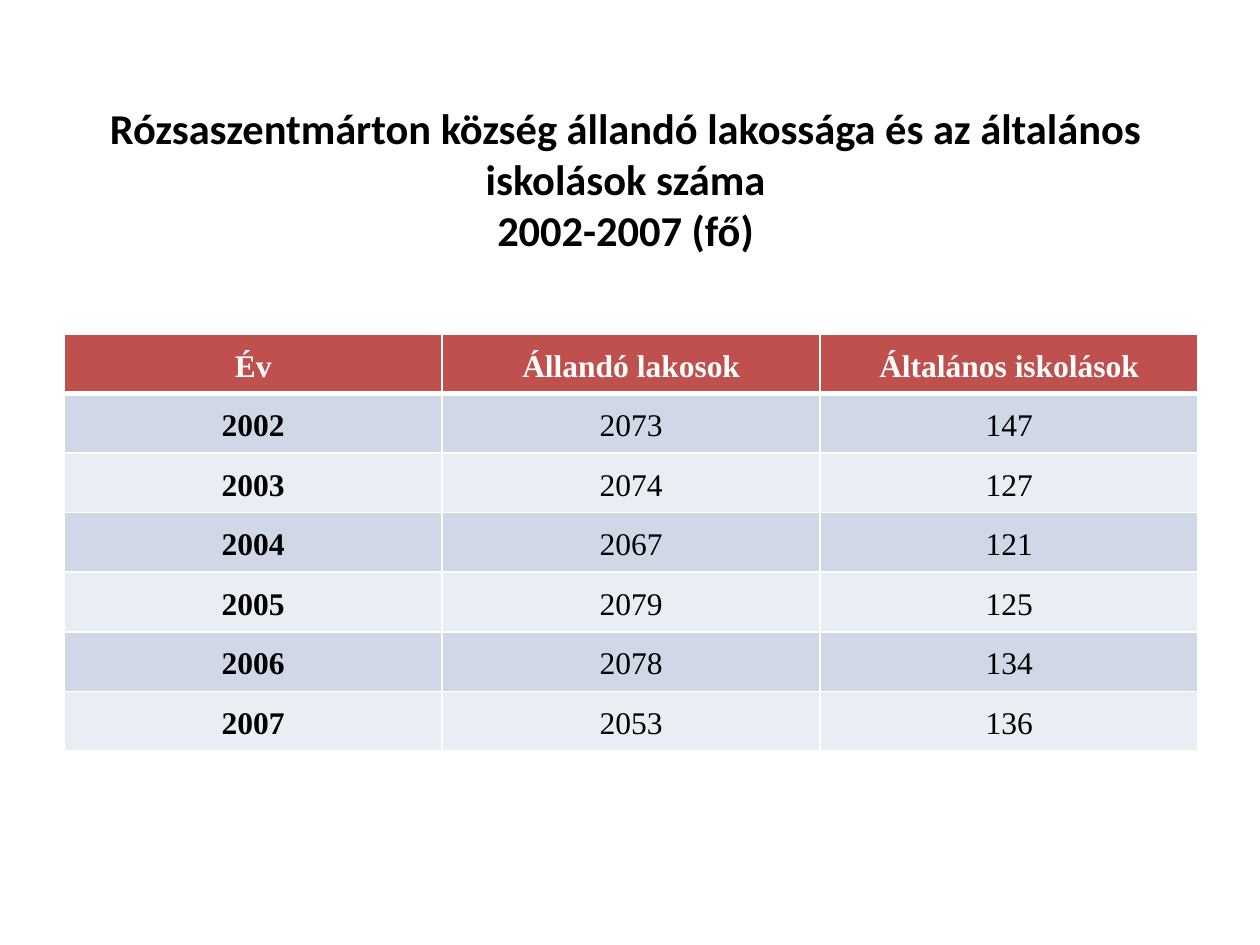
from lxml import etree
from pptx import Presentation
from pptx.dml.color import RGBColor
from pptx.enum.text import MSO_ANCHOR, MSO_AUTO_SIZE, PP_ALIGN
from pptx.oxml.ns import qn
from pptx.util import Inches, Pt

CENTER = PP_ALIGN.CENTER
MIDDLE = MSO_ANCHOR.MIDDLE
NO_AUTOFIT = MSO_AUTO_SIZE.NONE
TITLE_ONLY = 5

COLORS = {
    "header": "C0504D",
    "band_dark": "D0D8E8",
    "band_light": "E9EDF4",
    "white": "FFFFFF",
    "black": "000000",
}

TITLE_LINES = [
    "Rózsaszentmárton község állandó lakossága és az általános iskolások száma",
    "2002-2007 (fő)",
]
HEADINGS = ["Év", "Állandó lakosok", "Általános iskolások"]
POPULATION = [
    (2002, 2073, 147),
    (2003, 2074, 127),
    (2004, 2067, 121),
    (2005, 2079, 125),
    (2006, 2078, 134),
    (2007, 2053, 136),
]
COLUMN_WIDTH, ROW_HEIGHT = 3, 0.473


def rgb(name):
    return RGBColor.from_string(COLORS[name])


def write(paragraph, text, *, font, size, color="black", bold=False, spacing=None):
    paragraph.alignment = CENTER
    if spacing:
        paragraph.line_spacing = spacing
    run = paragraph.add_run()
    run.text = text
    run.font.name = font
    run.font.size = Pt(size)
    run.font.bold = bold
    run.font.color.rgb = rgb(color)


def add_title(slide):
    title = slide.shapes.title
    title.left, title.top = Inches(0.43), Inches(0.8)
    title.width, title.height = Inches(9.07), Inches(1.24)
    frame = title.text_frame
    frame.word_wrap = True
    frame.auto_size = NO_AUTOFIT
    frame.vertical_anchor = MIDDLE
    frame.margin_top = frame.margin_bottom = 0
    for index, line in enumerate(TITLE_LINES):
        paragraph = frame.add_paragraph() if index else frame.paragraphs[0]
        write(paragraph, line, font="Calibri", size=24.3, bold=True)


def set_borders(cell, widths):
    """Draw white borders; widths maps each side's tag to points."""
    properties = cell._tc.get_or_add_tcPr()
    for position, (side, width) in enumerate(widths.items()):
        line = etree.Element(qn(f"a:{side}"), w=str(Pt(width)))
        fill = etree.SubElement(line, qn("a:solidFill"))
        etree.SubElement(fill, qn("a:srgbClr"), val=COLORS["white"])
        properties.insert(position, line)


def format_cell(cell, text, row, column):
    is_header = row == 0
    band = "band_dark" if row % 2 else "band_light"
    cell.fill.solid()
    cell.fill.fore_color.rgb = rgb("header" if is_header else band)
    cell.vertical_anchor = MIDDLE
    cell.margin_left = cell.margin_right = Inches(0.07)
    cell.margin_top = cell.margin_bottom = 0
    write(cell.text_frame.paragraphs[0], text, font="Times New Roman", size=18,
          color="white" if is_header else "black",
          bold=is_header or column == 0, spacing=1.15)
    # A thick rule separates the headings from the years
    set_borders(cell, {"lnL": 1, "lnR": 1, "lnT": 3 if row == 1 else 1,
                       "lnB": 3 if is_header else 1})


def add_population_table(slide):
    rows = [HEADINGS, *POPULATION]
    table = slide.shapes.add_table(
        len(rows), len(HEADINGS), Inches(0.51), Inches(2.65),
        Inches(COLUMN_WIDTH * len(HEADINGS)), Inches(ROW_HEIGHT * len(rows)),
    ).table
    for row, values in enumerate(rows):
        for column, value in enumerate(values):
            format_cell(table.cell(row, column), str(value), row, column)


def main():
    presentation = Presentation()
    presentation.slide_width, presentation.slide_height = Inches(10), Inches(7.5)
    slide = presentation.slides.add_slide(presentation.slide_layouts[TITLE_ONLY])
    add_title(slide)
    add_population_table(slide)
    presentation.save("out.pptx")


if __name__ == "__main__":
    main()
